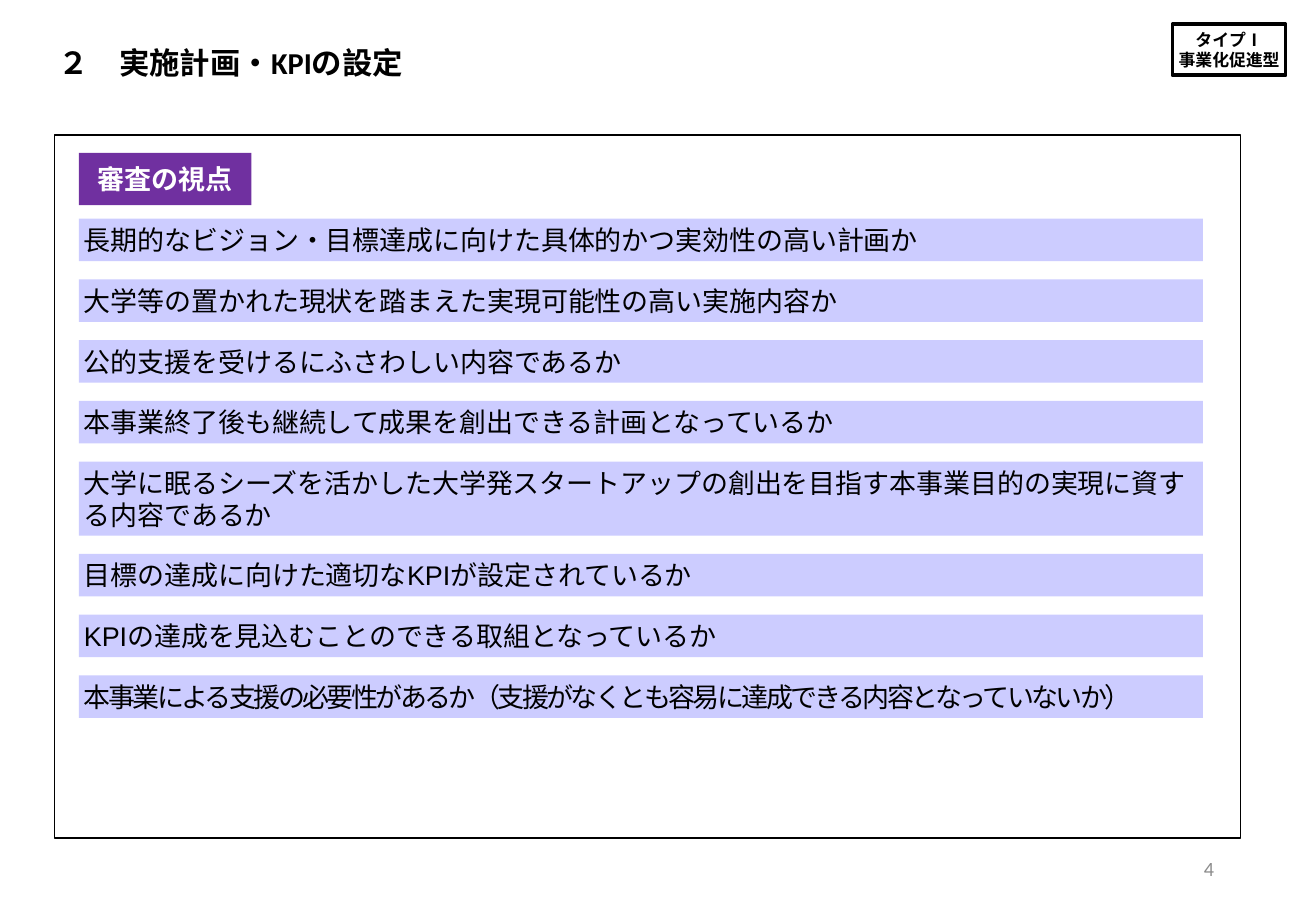
from dataclasses import dataclass
from pptx import Presentation
from pptx.dml.color import RGBColor
from pptx.enum.shapes import MSO_SHAPE
from pptx.enum.text import MSO_ANCHOR, MSO_AUTO_SIZE, PP_ALIGN
from pptx.util import Inches, Pt


@dataclass(frozen=True)
class Theme:
    black: str = "000000"
    white: str = "FFFFFF"
    purple: str = "7030A0"
    lilac: str = "CCCCFF"
    gray: str = "8C8C8C"
    head: int = 18
    body: int = 16
    page: int = 12
    tag: int = 10
    sans: str = "Arial"
    alt: str = "Calibri"


THEME = Theme()

# Review points: text, font, bar height, letter spacing (1/100 pt)
POINTS = [
    ("長期的なビジョン・目標達成に向けた具体的かつ実効性の高い計画か", THEME.alt, 0.35, 0),
    ("大学等の置かれた現状を踏まえた実現可能性の高い実施内容か", THEME.sans, 0.35, 0),
    ("公的支援を受けるにふさわしい内容であるか", THEME.sans, 0.35, 0),
    ("本事業終了後も継続して成果を創出できる計画となっているか", THEME.alt, 0.35, 0),
    ("大学に眠るシーズを活かした大学発スタートアップの創出を目指す本事業目的の実現に資する内容であるか",
     THEME.sans, 0.61, 0),
    ("目標の達成に向けた適切なKPIが設定されているか", THEME.sans, 0.35, 0),
    ("KPIの達成を見込むことのできる取組となっているか", THEME.sans, 0.35, 0),
    ("本事業による支援の必要性があるか（支援がなくとも容易に達成できる内容となっていないか）",
     THEME.sans, 0.35, -150),
]
GAP = 0.15


def write(shape, lines, size, font=THEME.sans, color=THEME.black,
          bold=False, align=PP_ALIGN.LEFT, space=0):
    frame = shape.text_frame
    frame.word_wrap = True
    frame.auto_size = MSO_AUTO_SIZE.NONE
    frame.vertical_anchor = MSO_ANCHOR.MIDDLE
    frame.margin_left = frame.margin_right = Inches(0.04)
    frame.margin_top = frame.margin_bottom = Inches(0.04)
    for i, line in enumerate(lines):
        para = frame.add_paragraph() if i else frame.paragraphs[0]
        para.alignment = align
        run = para.add_run()
        run.text = line
        run.font.size = Pt(size)
        run.font.name = font
        run.font.bold = bold
        run.font.color.rgb = RGBColor.from_string(color)
        if space:
            run._r.get_or_add_rPr().set("spc", str(space))


def add_box(slide, x, y, w, h, fill=None, line=None):
    box = slide.shapes.add_shape(
        MSO_SHAPE.RECTANGLE, Inches(x), Inches(y), Inches(w), Inches(h))
    box.shadow.inherit = False
    if fill:
        box.fill.solid()
        box.fill.fore_color.rgb = RGBColor.from_string(fill)
    else:
        box.fill.background()
    if line:
        box.line.color.rgb = RGBColor.from_string(THEME.black)
        box.line.width = Pt(line)
    else:
        box.line.fill.background()
    return box


def add_title(slide, text):
    title = slide.shapes.title
    title.left, title.top = Inches(0.44), Inches(0.32)
    title.width, title.height = Inches(4.05), Inches(0.38)
    write(title, [text], THEME.head, THEME.alt, bold=True)


def add_points(slide, x, y, w):
    for text, font, high, space in POINTS:
        bar = add_box(slide, x, y, w, high, THEME.lilac)
        write(bar, [text], THEME.body, font, space=space)
        y += high + GAP


def add_page(slide, text):
    box = slide.shapes.add_textbox(
        Inches(7.65), Inches(6.95), Inches(2.44), Inches(0.4))
    write(box, [text], THEME.page, THEME.alt, THEME.gray, align=PP_ALIGN.RIGHT)
    box.text_frame.margin_right = Inches(0.1)


def main():
    prs = Presentation()
    prs.slide_width, prs.slide_height = Inches(10.83), Inches(7.5)
    slide = prs.slides.add_slide(prs.slide_layouts[5])

    # Heading and type tag
    add_title(slide, "２　実施計画・KPIの設定")
    tag = add_box(slide, 9.65, 0.2, 0.93, 0.42, line=2.25)
    write(tag, ["タイプⅠ", "事業化促進型"], THEME.tag, bold=True,
          align=PP_ALIGN.CENTER)

    # Frame with the review points
    add_box(slide, 0.45, 1.11, 9.76, 5.79, THEME.white, 1)
    label = add_box(slide, 0.65, 1.26, 1.42, 0.43, THEME.purple)
    write(label, ["審査の視点"], THEME.body, color=THEME.white, bold=True,
          align=PP_ALIGN.CENTER)
    add_points(slide, 0.65, 1.8, 9.25)

    # Page number
    add_page(slide, "4")
    prs.save("out.pptx")


if __name__ == "__main__":
    main()
